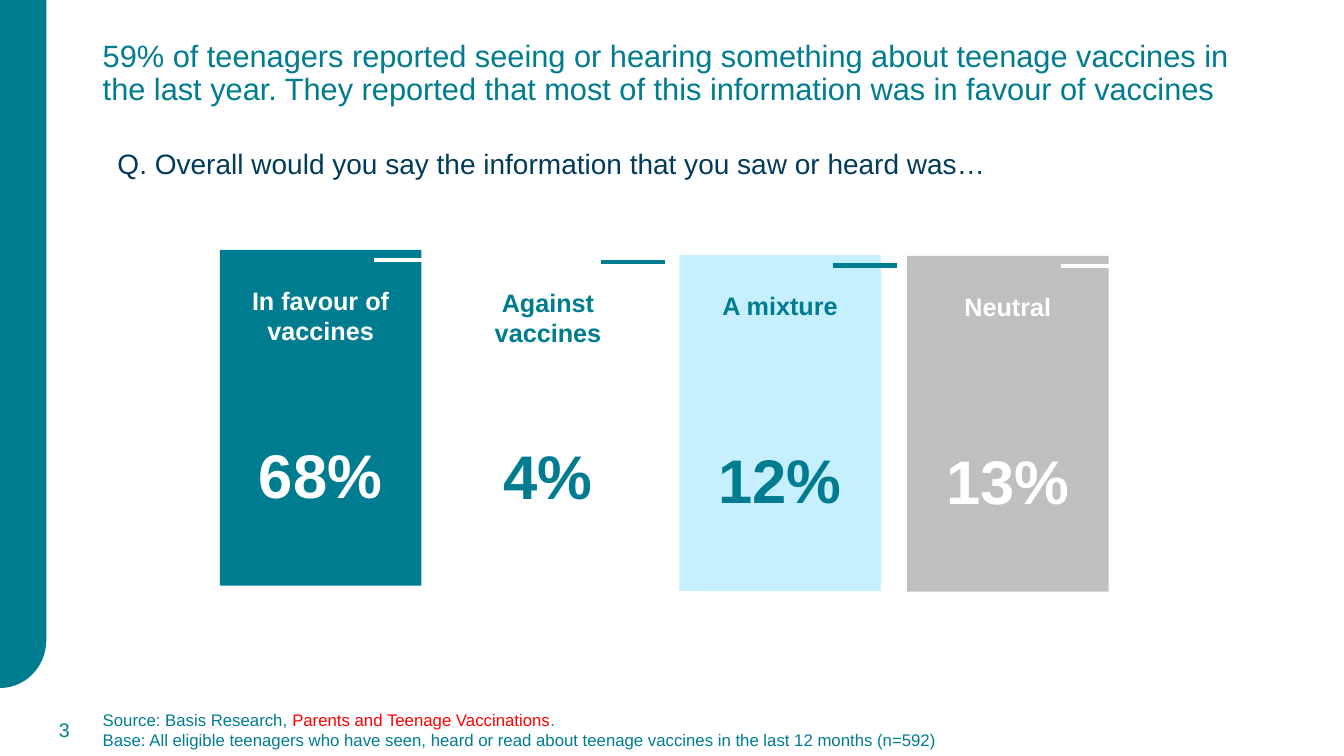
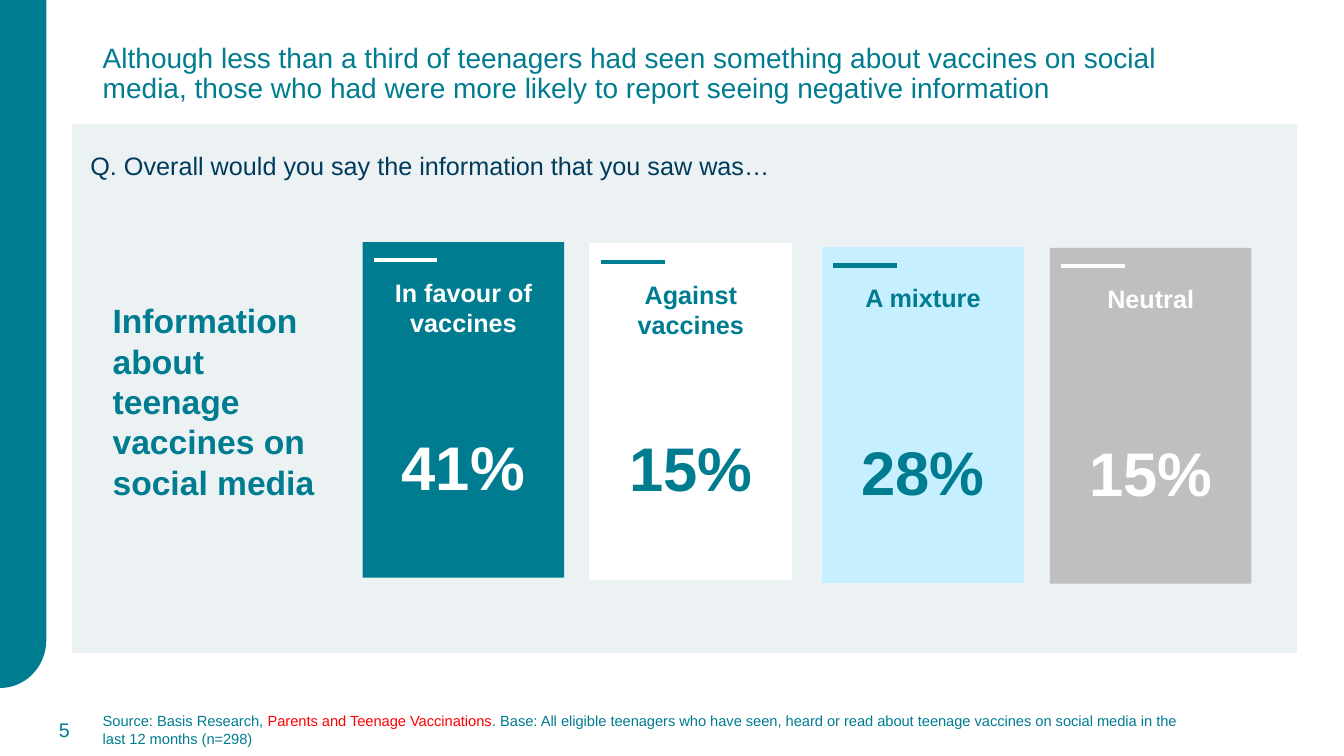
from math import cos, pi, sin

from lxml.etree import SubElement
from pptx import Presentation
from pptx.dml.color import RGBColor
from pptx.enum.shapes import MSO_CONNECTOR, MSO_SHAPE
from pptx.enum.text import MSO_ANCHOR as Anchor, PP_ALIGN as Align
from pptx.oxml.ns import qn
from pptx.util import Cm, Pt

# Shared style
FONT = "Arial"
TEAL, NAVY, RED = "007C91", "003B5C", "FF0000"
WHITE, SKY, GREY, PALE = "FFFFFF", "C6F0FF", "BFBFBF", "ECF1F4"

# Answer cards: label, fill, ink, left offset, top offset, lines in label
ANSWERS = [
    ("In favour of vaccines", TEAL, WHITE, 0, 0, 2),
    ("Against vaccines", WHITE, TEAL, 5.73, 0.04, 2),
    ("A mixture", SKY, TEAL, 11.58, 0.13, 1),
    ("Neutral", GREY, WHITE, 17.32, 0.15, 1),
]
CARD_WIDTH, CARD_HEIGHT = 5.08, 8.46
ACCENT_LEFT, ACCENT_TOP, ACCENT_LENGTH = 9.42, 6.56, 1.6
LABEL_LINE = 21.6  # points


def color(hex_text):
    return RGBColor.from_string(hex_text)


def style_shape(shape, fill, line=None, line_width=1):
    shape.shadow.inherit = False
    shape.fill.solid()
    shape.fill.fore_color.rgb = color(fill)
    if line:
        shape.line.color.rgb = color(line)
        shape.line.width = Pt(line_width)
    else:
        shape.line.fill.background()


def write(paragraph, *runs, size, ink=TEAL, bold=False, align=Align.LEFT,
          spacing=None, before=0):
    """Fill a paragraph; a run is a string or a (string, colour) pair."""
    paragraph.alignment = align
    paragraph.space_before = Pt(before)
    if spacing:
        paragraph.line_spacing = spacing
    for item in runs:
        text, run_ink = (item, ink) if isinstance(item, str) else item
        run = paragraph.add_run()
        run.text = text
        run.font.name = FONT
        run.font.size = Pt(size)
        run.font.bold = bold
        run.font.color.rgb = color(run_ink)


def add_text(slide, left, top, width, height, *paragraphs,
             anchor=Anchor.MIDDLE, **text_format):
    """Add a text box; each paragraph is a list of runs."""
    box = slide.shapes.add_textbox(Cm(left), Cm(top), Cm(width), Cm(height))
    frame = box.text_frame
    frame.word_wrap = True
    frame.vertical_anchor = anchor
    for index, runs in enumerate(paragraphs):
        paragraph = frame.add_paragraph() if index else frame.paragraphs[0]
        write(paragraph, *runs, **text_format)


def add_rectangle(slide, left, top, width, height, fill, **outline):
    shape = slide.shapes.add_shape(
        MSO_SHAPE.RECTANGLE, Cm(left), Cm(top), Cm(width), Cm(height))
    style_shape(shape, fill, **outline)
    return shape


def add_side_band(slide):
    """Band on the left edge with its lower right corner rounded."""
    width, straight, curve, steps = 1.15, 16.13, 1.19, 24
    angles = [pi / 2 * step / steps for step in range(steps + 1)]
    corner = [(Cm(width * cos(a)), Cm(straight + curve * sin(a)))
              for a in angles]
    builder = slide.shapes.build_freeform(0, 0)
    builder.add_line_segments([(Cm(width), 0)] + corner, close=True)
    style_shape(builder.convert_to_shape(), TEAL, line=TEAL)


def add_accent(slide, left, top, ink):
    line = slide.shapes.add_connector(
        MSO_CONNECTOR.STRAIGHT,
        Cm(left), Cm(top), Cm(left + ACCENT_LENGTH), Cm(top))
    line.line.color.rgb = color(ink)
    line.line.width = Pt(3)
    SubElement(line._element.spPr, qn("a:effectLst"))


def add_cards(slide, left, top, values):
    for answer, value in zip(ANSWERS, values):
        label, fill, ink, shift, drop, label_lines = answer
        card = add_rectangle(slide, left + shift, top + drop,
                             CARD_WIDTH, CARD_HEIGHT, fill,
                             line=WHITE if fill == WHITE else None)
        frame = card.text_frame
        frame.word_wrap = True
        frame.vertical_anchor = Anchor.TOP
        frame.margin_top = Cm(0.89)
        centred = dict(ink=ink, bold=True, align=Align.CENTER)
        write(frame.paragraphs[0], label, size=18, **centred)
        write(frame.add_paragraph(), value, size=44,
              before=LABEL_LINE * (5 - label_lines), **centred)
        add_accent(slide, ACCENT_LEFT + shift, ACCENT_TOP + drop, ink)


def add_slide(presentation, number, title, title_size, source, source_size,
              source_width):
    """Add a slide with the band, title, source and number."""
    slide = presentation.slides.add_slide(presentation.slide_layouts[6])
    add_side_band(slide)
    add_text(slide, 2.34, 0.03, 29.21, 3.68, [title],
             size=title_size, spacing=0.9)
    add_text(slide, 2.34, 17.88, source_width, 1.02, *source,
             size=source_size)
    add_text(slide, 0.36, 17.88, 1.65, 1.02, [str(number)],
             size=14, align=Align.RIGHT)
    return slide


def main():
    presentation = Presentation()
    presentation.slide_width = Cm(33.87)
    presentation.slide_height = Cm(19.05)
    survey = ["Source: Basis Research, ",
              ("Parents and Teenage Vaccinations", RED)]

    # All information
    slide = add_slide(
        presentation, 3,
        "59% of teenagers reported seeing or hearing something about teenage "
        "vaccines in the last year. They reported that most of this "
        "information was in favour of vaccines", 22,
        [survey + ["."],
         ["Base: All eligible teenagers who have seen, heard or read about "
          "teenage vaccines in the last 12 months (n=592)"]], 12, 29.46)
    add_text(slide, 2.69, 3.48, 22.43, 1.27,
             ["Q. Overall would you say the information that you saw or "
              "heard was…"], size=20, ink=NAVY, align=Align.CENTER)
    add_cards(slide, 5.54, 6.3, ["68%", "4%", "12%", "13%"])

    # Social media
    slide = add_slide(
        presentation, 5,
        "Although less than a third of teenagers had seen something about "
        "vaccines on social media, those who had were more likely to report "
        "seeing negative information", 20,
        [survey + [". Base: All eligible teenagers who have seen, heard or "
                   "read about teenage vaccines on social media in the last "
                   "12 months (n=298)"]], 10.5, 28.12)
    add_rectangle(slide, 1.8, 3.1, 30.91, 13.39, PALE,
                  line=WHITE, line_width=1.5)
    add_text(slide, 2.03, 3.28, 30.68, 1.27,
             ["Q. Overall would you say the information that you saw was…"],
             anchor=Anchor.TOP, size=18, ink=NAVY, spacing=1.5)
    add_text(slide, 2.59, 7.42, 6.07, 5.38,
             ["Information about teenage vaccines on social media"],
             size=24, bold=True)
    add_cards(slide, 9.14, 6.1, ["41%", "15%", "28%", "15%"])

    presentation.save("out.pptx")


if __name__ == "__main__":
    main()
